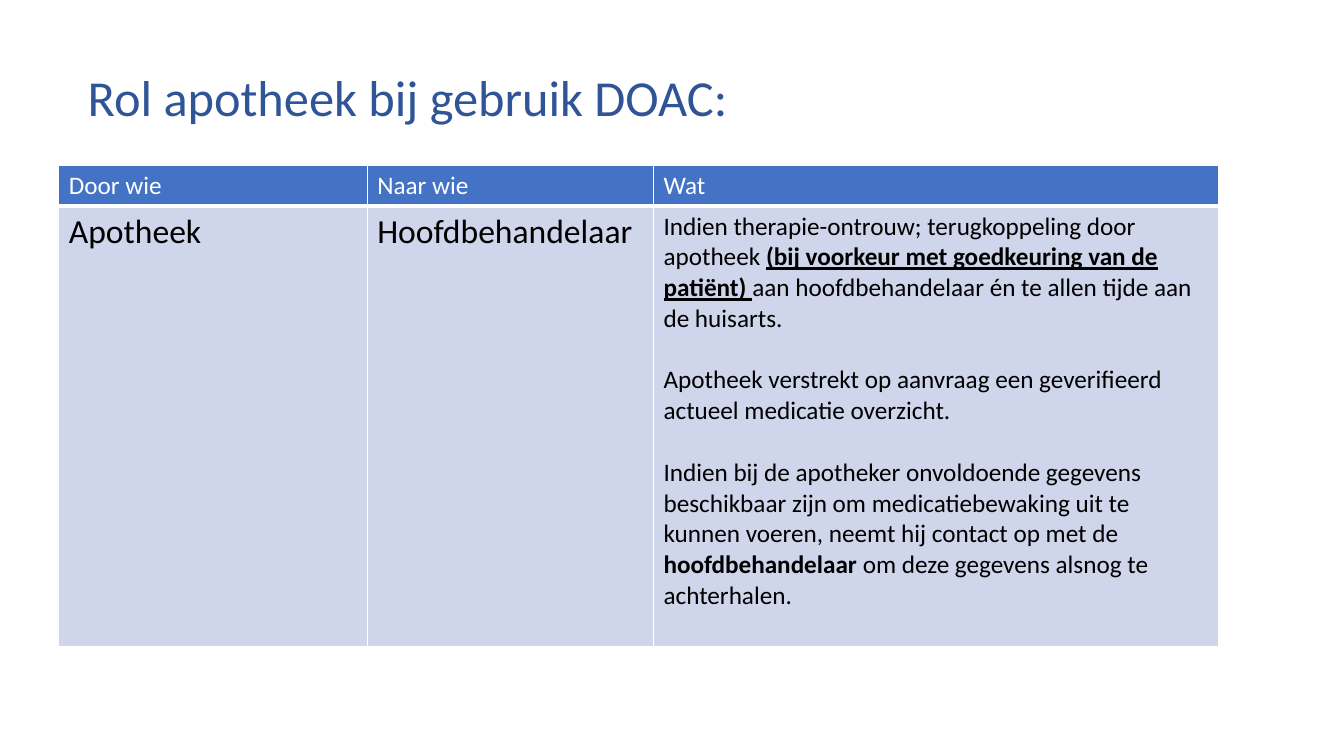
"""Build a slide on the role of the pharmacy in DOAC use."""
from dataclasses import dataclass

import lxml.etree
import pptx
import pptx.dml.color
import pptx.oxml.ns
import pptx.table
import pptx.text.text
import pptx.util

Pt = pptx.util.Pt
BLACK, WHITE = "000000", "FFFFFF"
HEADER_BLUE, BODY_BLUE, TITLE_BLUE = "4472C4", "CFD5EA", "2F5597"
COLUMN_WIDTHS = (220.3, 204.5, 403.4)
ROW_HEIGHTS = (29.1, 314.7)
PARAGRAPH_GAP = 22


@dataclass(frozen=True)
class Phrase:
    text: str
    bold: bool = False
    underline: bool = False


@dataclass(frozen=True)
class Entry:
    paragraphs: tuple[tuple[Phrase, ...], ...]
    size: float
    color: str
    fill: str
    bottom_border: float = 1


def rgb(value: str) -> pptx.dml.color.RGBColor:
    """Turn a hex string into a colour."""
    return pptx.dml.color.RGBColor.from_string(value)


def write(frame: pptx.text.text.TextFrame, paragraphs: tuple[tuple[Phrase, ...], ...],
          size: float, color: str) -> None:
    """Fill a text frame with formatted paragraphs."""
    frame.word_wrap = True
    for index, phrases in enumerate(paragraphs):
        paragraph = frame.add_paragraph() if index else frame.paragraphs[0]
        paragraph.space_before = Pt(PARAGRAPH_GAP if index else 0)
        for phrase in phrases:
            run = paragraph.add_run()
            run.text = phrase.text
            formats = {"name": "Calibri", "size": Pt(size),
                       "bold": phrase.bold, "underline": phrase.underline}
            for attribute, value in formats.items():
                setattr(run.font, attribute, value)
            run.font.color.rgb = rgb(color)


def draw_entry(cell: pptx.table._Cell, entry: Entry) -> None:
    """Write, border and fill one table cell."""
    write(cell.text_frame, entry.paragraphs, entry.size, entry.color)
    qn = pptx.oxml.ns.qn
    properties = cell._tc.get_or_add_tcPr()
    borders = {"lnL": 1, "lnR": 1, "lnT": 1, "lnB": entry.bottom_border}
    for side, width in borders.items():
        border = lxml.etree.SubElement(properties, qn(f"a:{side}"), w=str(int(Pt(width))))
        solid = lxml.etree.SubElement(border, qn("a:solidFill"))
        lxml.etree.SubElement(solid, qn("a:srgbClr"), val=WHITE)
    cell.fill.solid()
    cell.fill.fore_color.rgb = rgb(entry.fill)


def header(text: str) -> Entry:
    """Describe a heading cell."""
    return Entry(((Phrase(text),),), 18, WHITE, HEADER_BLUE, 3)


def body(size: float, *paragraphs: tuple[Phrase, ...]) -> Entry:
    """Describe a body cell."""
    return Entry(paragraphs, size, BLACK, BODY_BLUE)


ROLES = (
    (header("Door wie"), header("Naar wie"), header("Wat")),
    (
        body(24, (Phrase("Apotheek"),)),
        body(24, (Phrase("Hoofdbehandelaar"),)),
        body(
            18,
            (Phrase("Indien therapie-ontrouw; terugkoppeling door apotheek "),
             Phrase("(bij voorkeur met goedkeuring van de patiënt) ", True, True),
             Phrase("aan hoofdbehandelaar én te allen tijde aan de huisarts.")),
            (Phrase("Apotheek verstrekt op aanvraag een geverifieerd actueel "
                    "medicatie overzicht."),),
            (Phrase("Indien bij de apotheker onvoldoende gegevens beschikbaar zijn om "
                    "medicatiebewaking uit te kunnen voeren, neemt hij contact op met de "),
             Phrase("hoofdbehandelaar", True),
             Phrase(" om deze gegevens alsnog te achterhalen.")),
        ),
    ),
)


def main() -> None:
    """Create and save the presentation."""
    deck = pptx.Presentation()
    deck.slide_width, deck.slide_height = Pt(960), Pt(540)
    slide = deck.slides.add_slide(deck.slide_layouts[6])

    roles = slide.shapes.add_table(
        len(ROLES), len(COLUMN_WIDTHS), Pt(42), Pt(118),
        Pt(sum(COLUMN_WIDTHS)), Pt(sum(ROW_HEIGHTS))).table
    for column, width in zip(roles.columns, COLUMN_WIDTHS):
        column.width = Pt(width)
    for row, height, entries in zip(roles.rows, ROW_HEIGHTS, ROLES):
        row.height = Pt(height)
        for cell, entry in zip(row.cells, entries):
            draw_entry(cell, entry)

    title = slide.shapes.add_textbox(Pt(55.6), Pt(43.4), Pt(723), Pt(51))
    write(title.text_frame, ((Phrase("Rol apotheek bij gebruik DOAC:"),),), 36, TITLE_BLUE)
    deck.save("out.pptx")


if __name__ == "__main__":
    main()
